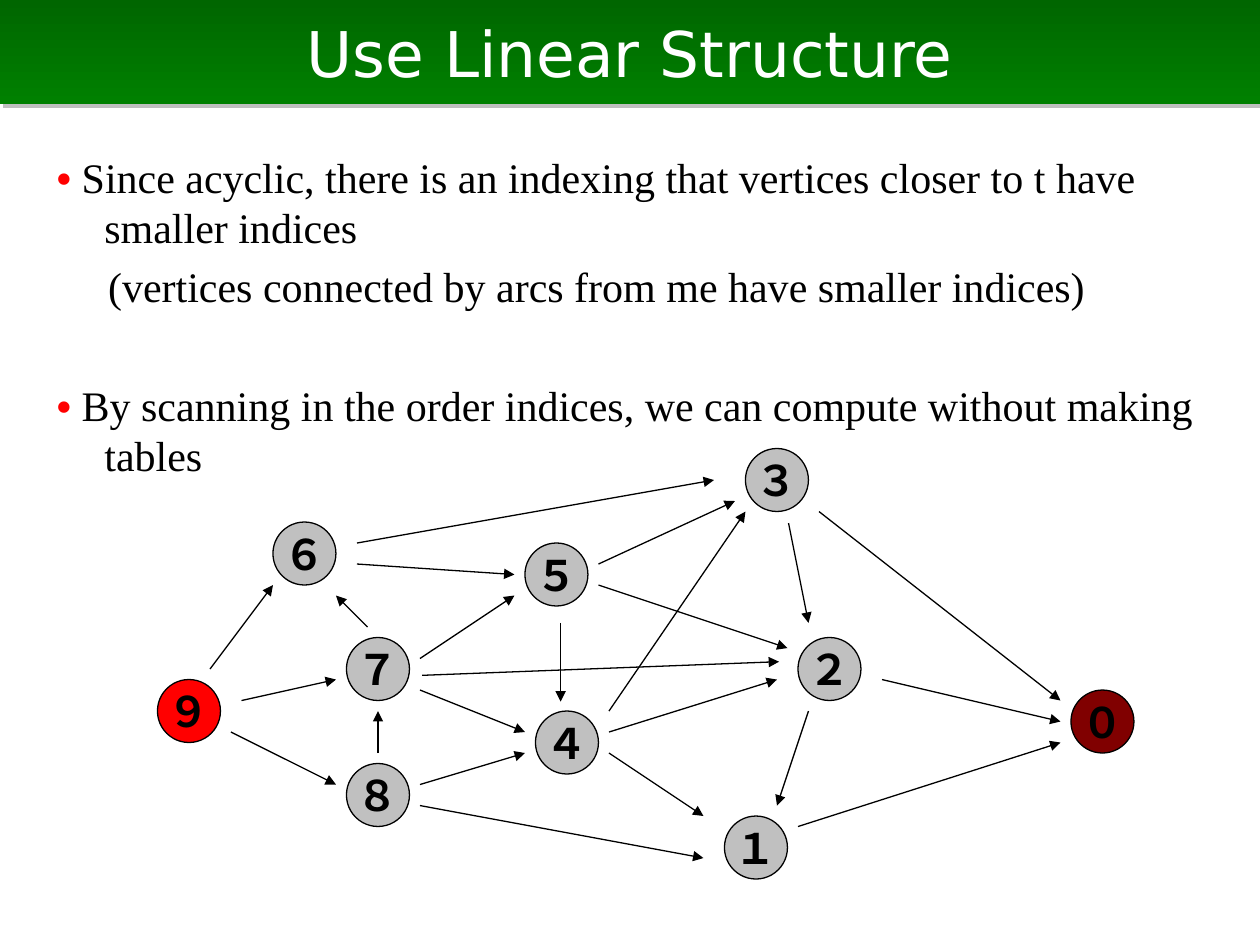
from lxml import etree
from pptx import Presentation
from pptx.dml.color import RGBColor
from pptx.enum.shapes import MSO_CONNECTOR, MSO_SHAPE
from pptx.enum.text import MSO_ANCHOR, PP_ALIGN
from pptx.oxml import parse_xml
from pptx.oxml.ns import nsdecls, qn
from pptx.util import Inches, Pt

RECT, OVAL = MSO_SHAPE.RECTANGLE, MSO_SHAPE.OVAL
STRAIGHT = MSO_CONNECTOR.STRAIGHT
CENTER, MIDDLE = PP_ALIGN.CENTER, MSO_ANCHOR.MIDDLE

SERIF = "Times New Roman"
TITLE = {"name": "DejaVu Sans", "size": Pt(36), "color": "FFFFFF"}
BODY = {"name": SERIF, "size": Pt(24), "color": "000000"}
BULLET = {"name": SERIF, "size": Pt(24), "color": "FF0000", "bold": True}
LABEL = {"name": SERIF, "size": Pt(24), "color": "000000", "bold": True}

# Text, space before in points, has a bullet
POINTS = [
    ("Since acyclic, there is an indexing that vertices closer to t have smaller indices",
     5, True),
    ("(vertices connected by arcs from me have smaller indices)", 5, False),
    ("By scanning in the order indices, we can compute without making tables", 39, True),
]

# The graph is laid out on a grid of 1/12 inch
GRID = 1 / 12
NODE_SIZE = 6
NODES = {
    "５": (35, 9), "４": (36, 25), "１": (54, 35), "２": (61, 18), "３": (56, 0),
    "９": (0, 22), "０": (87, 23), "６": (11, 7), "７": (18, 18), "８": (18, 30),
}
NODE_FILLS = {"９": "FF0000", "０": "800000"}
ARCS = [  # x1, y1, x2, y2
    (5, 21, 11, 13), (8, 24, 17, 22), (7, 27, 17, 32),            # from 9
    (21, 29, 21, 25), (25, 32, 35, 29), (25, 34, 52, 39),         # from 8
    (20, 17, 17, 14), (25, 20, 34, 14), (25, 23, 35, 27),         # from 7
    (25.2, 21.6, 59.2, 20.3),
    (19, 9, 53, 3), (19, 11, 34, 12),                             # from 6
    (42, 11, 55, 5), (42, 13, 60, 19), (38.4, 16.6, 38.4, 24.1),  # from 5
    (43, 25, 56, 6), (43, 27, 59, 22), (43, 29, 52, 35),          # from 4
    (63, 6, 86, 24), (60.1, 7.1, 62, 16.6),                       # from 3
    (69, 22, 86, 26), (62, 25, 59, 34),                           # from 2
    (61, 36, 86, 28),                                             # from 1
]


def rgb(value):
    return RGBColor.from_string(value)


def add_run(p, text, style):
    r = p.add_run()
    r.text = text
    for key, value in style.items():
        if key == "color":
            r.font.color.rgb = rgb(value)
        else:
            setattr(r.font, key, value)


def add_title(s, left, top, width, height):
    sp = s.shapes.add_shape(RECT, Inches(left), Inches(top), Inches(width), Inches(height))
    sp.line.fill.background()
    sp.fill.gradient()
    sp.fill.gradient_angle = 270
    for stop, color in zip(sp.fill.gradient_stops, ("006600", "008000")):
        stop.color.rgb = rgb(color)
    # Soft grey shadow below the band
    sp._element.spPr.append(parse_xml(
        f'<a:effectLst {nsdecls("a")}>'
        f'<a:outerShdw dist="{Pt(2.8)}" dir="2700000" algn="ctr" rotWithShape="0">'
        '<a:srgbClr val="808080"><a:alpha val="50000"/></a:srgbClr>'
        '</a:outerShdw></a:effectLst>'))
    tf = sp.text_frame
    tf.vertical_anchor = MIDDLE
    p = tf.paragraphs[0]
    p.alignment = CENTER
    add_run(p, "Use Linear Structure", TITLE)


def add_points(s, left, top, width, height):
    tf = s.shapes.add_textbox(
        Inches(left), Inches(top), Inches(width), Inches(height)).text_frame
    tf.word_wrap = True
    for i, (text, before, bulleted) in enumerate(POINTS):
        p = tf.add_paragraph() if i else tf.paragraphs[0]
        p.space_before = Pt(before)
        # Bullets hang closer to the text than the wrapped lines do
        pPr = p._p.get_or_add_pPr()
        pPr.set("marL", str(Inches(0.38 if bulleted else 0.41)))
        pPr.set("indent", str(Inches(-0.38 if bulleted else 0)))
        if bulleted:
            add_run(p, "• ", BULLET)
        add_run(p, text, BODY)


def add_node(s, left, top, size, label):
    sp = s.shapes.add_shape(OVAL, Inches(left), Inches(top), Inches(size), Inches(size))
    sp.shadow.inherit = False
    sp.fill.solid()
    sp.fill.fore_color.rgb = rgb(NODE_FILLS.get(label, "C0C0C0"))
    sp.line.color.rgb = rgb("000000")
    sp.line.width = Pt(0.75)
    tf = sp.text_frame
    tf.word_wrap = False
    tf.vertical_anchor = MIDDLE
    p = tf.paragraphs[0]
    p.alignment = CENTER
    add_run(p, label, LABEL)


def add_arc(s, x1, y1, x2, y2):
    c = s.shapes.add_connector(STRAIGHT, Inches(x1), Inches(y1), Inches(x2), Inches(y2))
    c.line.color.rgb = rgb("000000")
    c.line.width = Pt(0.75)
    etree.SubElement(c.line._get_or_add_ln(), qn("a:tailEnd"), type="triangle")
    etree.SubElement(c._element.spPr, qn("a:effectLst"))


def add_graph(s, left, top):
    for label, (x, y) in NODES.items():
        add_node(s, left + x * GRID, top + y * GRID, NODE_SIZE * GRID, label)
    for x1, y1, x2, y2 in ARCS:
        add_arc(s, left + x1 * GRID, top + y1 * GRID, left + x2 * GRID, top + y2 * GRID)


def main():
    prs = Presentation()
    prs.slide_width, prs.slide_height = Inches(10), Inches(7.5)
    s = prs.slides.add_slide(prs.slide_layouts[6])
    add_title(s, 0, 0, 10, 0.83)
    add_points(s, 0.35, 1.15, 9.25, 2.36)
    add_graph(s, 1.25, 3.56)
    prs.save("out.pptx")


if __name__ == "__main__":
    main()
